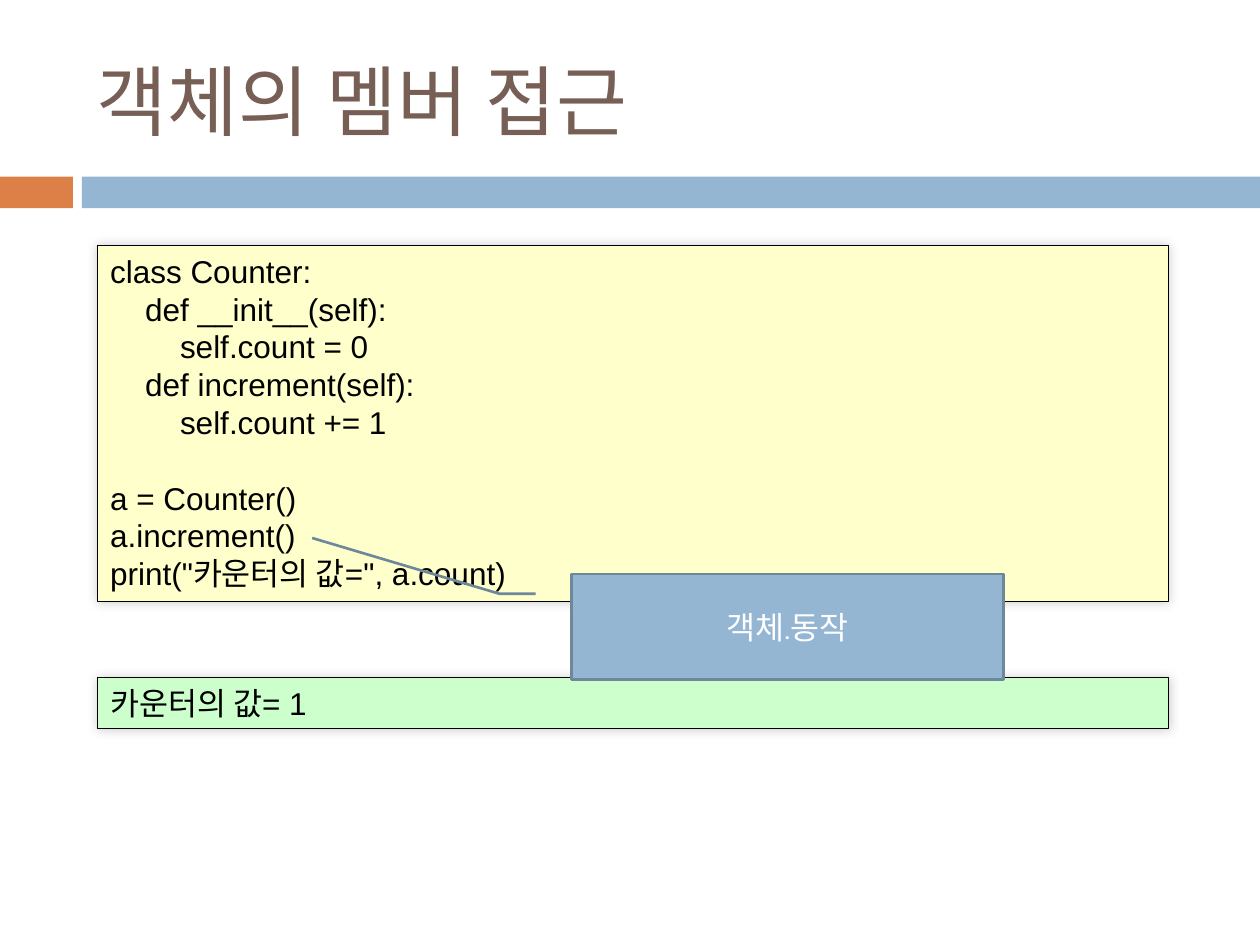
from dataclasses import dataclass

from lxml import etree
from pptx import Presentation
from pptx.dml.color import RGBColor as RGB
from pptx.enum.shapes import MSO_SHAPE as Shape
from pptx.enum.text import MSO_ANCHOR as Anchor, PP_ALIGN as Align
from pptx.oxml.ns import qn
from pptx.util import Cm, Pt


@dataclass(frozen=True)
class Theme:
    brown: str = "775F55"
    orange: str = "DD8047"
    blue: str = "94B6D2"
    blue_edge: str = "6D879B"
    yellow: str = "FFFFCC"
    green: str = "CCFFCC"
    black: str = "000000"
    white: str = "FFFFFF"
    heading: str = "Cabin"
    body: str = "Arial"
    title_size: int = 44
    text_size: int = 18


T = Theme()
BODY = dict(name=T.body, size=Pt(T.text_size), color=T.black)
LABEL = dict(name=T.heading, size=Pt(T.text_size), color=T.white)
TITLE = dict(name=T.heading, size=Pt(T.title_size), color=T.brown)

INDENT = 0.705  # four spaces of the body type
LINE_GAP = 21.6  # height of one line, in points

# (indent level, blank lines before, text)
CODE = [
    (0, 0, "class Counter:"),
    (1, 0, "def __init__(self):"),
    (2, 0, "self.count = 0"),
    (1, 0, "def increment(self):"),
    (2, 0, "self.count += 1"),
    (0, 1, "a = Counter()"),
    (0, 0, "a.increment()"),
    (0, 0, 'print("카운터의 값=", a.count)'),
]
RESULT = [(0, 0, "카운터의 값= 1")]


def add_block(s, box, fill, line=None, width=0.75, kind=Shape.RECTANGLE):
    sp = s.shapes.add_shape(kind, *map(Cm, box))
    sp.shadow.inherit = False
    sp.fill.solid()
    sp.fill.fore_color.rgb = RGB.from_string(fill)
    if line:
        sp.line.color.rgb = RGB.from_string(line)
        sp.line.width = Pt(width)
    else:
        sp.line.fill.background()
    return sp


def add_glow_shadow(sp):
    """Soft black shadow all around the shape."""
    effects = sp.element.spPr.find(qn("a:effectLst"))
    shadow = etree.SubElement(effects, qn("a:outerShdw"), blurRad=str(Pt(6)),
                              dist="0", dir="18900000", rotWithShape="0")
    color = etree.SubElement(shadow, qn("a:srgbClr"), val=T.black)
    etree.SubElement(color, qn("a:alpha"), val="20000")


def write(p, text, style, align=Align.LEFT):
    p.alignment = align
    r = p.add_run()
    r.text = text
    for name, value in style.items():
        if name == "color":
            r.font.color.rgb = RGB.from_string(value)
        else:
            setattr(r.font, name, value)


def set_frame(sp, anchor):
    tf = sp.text_frame
    for name, value in dict(word_wrap=True, vertical_anchor=anchor).items():
        setattr(tf, name, value)
    return tf


def add_title(s, box, text):
    tf = set_frame(s.shapes.add_textbox(*map(Cm, box)), Anchor.MIDDLE)
    write(tf.paragraphs[0], text, TITLE)


def add_band(s, box, tab=1.47, gap=0.18):
    """Orange tab, then a blue bar over the rest of the width."""
    x, y, w, h = box
    add_block(s, (x, y, tab, h), T.orange)
    add_block(s, (x + tab + gap, y, w - tab - gap, h), T.blue)


def add_listing(s, box, fill, lines):
    sp = add_block(s, box, fill, T.black)
    add_glow_shadow(sp)
    tf = set_frame(sp, Anchor.TOP)
    for i, (level, blanks, text) in enumerate(lines):
        p = tf.add_paragraph() if i else tf.paragraphs[0]
        if level:
            p._p.get_or_add_pPr().set("marL", str(Cm(INDENT * level)))
        if blanks:
            p.space_before = Pt(LINE_GAP * blanks)
        write(p, text, BODY)


def add_callout(s, box, text, pointer):
    sp = add_block(s, box, T.blue, T.blue_edge, 1.5, Shape.LINE_CALLOUT_2)
    for i, value in enumerate(pointer):
        sp.adjustments[i] = value
    tf = set_frame(sp, Anchor.MIDDLE)
    write(tf.paragraphs[0], text, LABEL, Align.CENTER)


def main():
    prs = Presentation()
    prs.slide_width, prs.slide_height = Cm(25.4), Cm(19.05)
    s = prs.slides.add_slide(prs.slide_layouts[6])
    left, width = 1.97, 21.59

    add_band(s, (0, 3.56, 25.4, 0.64))
    add_title(s, (1.7, 0.64, 22.66, 2.74), "객체의 멤버 접근")
    add_listing(s, (left, 4.95, width, 7.18), T.yellow, CODE)
    add_listing(s, (left, 13.66, width, 1.03), T.green, RESULT)
    add_callout(s, (11.52, 11.57, 8.71, 2.13), "객체.동작",
                (0.188, -0.083, 0.188, -0.167, -0.34, -0.6))
    prs.save("out.pptx")


if __name__ == "__main__":
    main()
